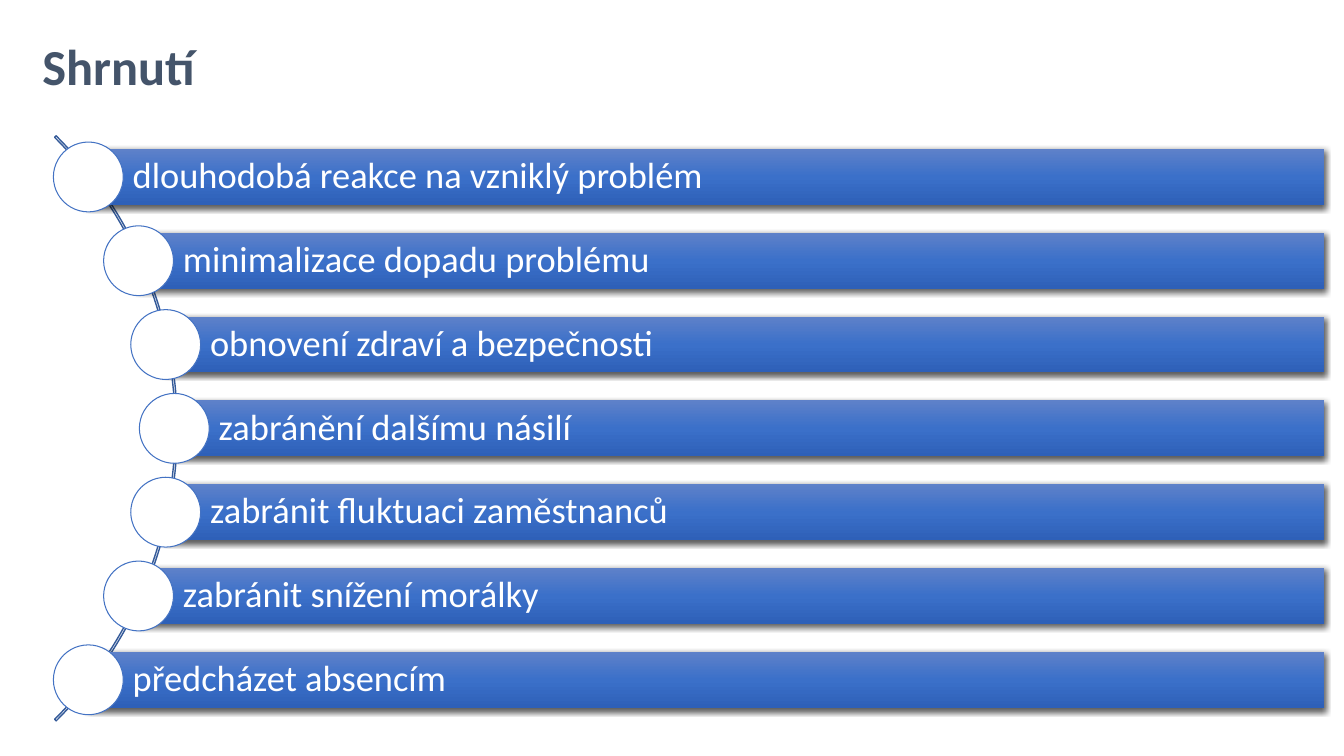
from copy import deepcopy
from math import sqrt

from lxml import etree
from pptx import Presentation
from pptx.dml.color import RGBColor
from pptx.enum.shapes import MSO_SHAPE
from pptx.enum.text import MSO_ANCHOR, MSO_AUTO_SIZE, PP_ALIGN
from pptx.oxml.ns import qn
from pptx.util import Inches, Pt

RECTANGLE, OVAL, BLOCK_ARC = MSO_SHAPE.RECTANGLE, MSO_SHAPE.OVAL, MSO_SHAPE.BLOCK_ARC
MIDDLE, LEFT, NO_AUTOFIT = MSO_ANCHOR.MIDDLE, PP_ALIGN.LEFT, MSO_AUTO_SIZE.NONE

SLIDE_W, SLIDE_H = 13.33, 7.5
FONT = "Calibri"
TITLE_ONLY = 5
COLORS = {
    "title": "44546A",
    "white": "FFFFFF",
    "arc": "345A99",
    "ring": "4372C3",
    "bar_top": "5E81C9",
    "bar_middle": "3B70C9",
    "bar_bottom": "2E60B8",
    "shadow": "000000",
}
POINTS = [
    "dlouhodobá reakce na vzniklý problém",
    "minimalizace dopadu problému",
    "obnovení zdraví a bezpečnosti",
    "zabránění dalšímu násilí",
    "zabránit fluktuaci zaměstnanců",
    "zabránit snížení morálky",
    "předcházet absencím",
]


def color(name):
    return RGBColor.from_string(COLORS[name])


def write(frame, text, size, color_name, margins, bold=False):
    frame.word_wrap = True
    frame.auto_size = NO_AUTOFIT
    frame.vertical_anchor = MIDDLE
    frame.margin_left, frame.margin_top, frame.margin_right, frame.margin_bottom = map(Inches, margins)
    paragraph = frame.paragraphs[0]
    paragraph.alignment = LEFT
    paragraph.line_spacing = 0.9
    run = paragraph.add_run()
    run.text = text
    run.font.name, run.font.size, run.font.bold = FONT, Pt(size), bold
    run.font.color.rgb = color(color_name)


def add_shape(slide, kind, left, top, width, height):
    shape = slide.shapes.add_shape(kind, *map(Inches, (left, top, width, height)))
    shape.shadow.inherit = False
    return shape


def outline(shape, color_name, width):
    shape.line.color.rgb = color(color_name)
    shape.line.width = Pt(width)


def shade_bar(bar):
    bar.fill.gradient()
    bar.fill.gradient_angle = 270
    stop_list = bar._element.spPr.find(".//" + qn("a:gsLst"))
    stop_list.insert(1, deepcopy(stop_list[0]))
    names = ("bar_top", "bar_middle", "bar_bottom")
    for stop, name, position in zip(bar.fill.gradient_stops, names, (0, 0.5, 1)):
        stop.color.rgb = color(name)
        stop.position = position
    bar.line.fill.background()


def drop_shadow(bar):
    effects = bar._element.spPr.find(qn("a:effectLst"))
    shadow = etree.SubElement(effects, qn("a:outerShdw"), blurRad=str(Pt(4.5)),
                              dist=str(Pt(1.5)), dir="5400000", algn="ctr", rotWithShape="0")
    tint = etree.SubElement(shadow, qn("a:srgbClr"), val=COLORS["shadow"])
    etree.SubElement(tint, qn("a:alpha"), val="63000")


def add_title(slide, text, left, top, width, height):
    title = slide.shapes.title
    title.left, title.top, title.width, title.height = map(Inches, (left, top, width, height))
    write(title.text_frame, text, 36, "title", (0.1, 0.05, 0.1, 0.05), bold=True)


def add_curved_list(slide, points, left, top, width, height):
    pitch = height / len(points)
    bar_height = pitch * 2 / 3
    knob = bar_height * 1.25
    right, center_y = left + width, top + height / 2
    radius = height * 0.7
    center_x = left + knob / 2 - sqrt(radius ** 2 - (pitch * (len(points) - 1) / 2) ** 2)

    arc_radius = radius + 0.03
    arc = add_shape(slide, BLOCK_ARC, center_x - arc_radius, center_y - arc_radius,
                    2 * arc_radius, 2 * arc_radius)
    for index, value in enumerate((189, 27, 0.0026)):
        arc.adjustments[index] = value
    arc.fill.background()
    outline(arc, "arc", 1)

    for row, point in enumerate(points):
        y = top + pitch * (row + 0.5)
        x = center_x + sqrt(radius ** 2 - (y - center_y) ** 2)
        bar = add_shape(slide, RECTANGLE, x, y - bar_height / 2, right - x, bar_height)
        shade_bar(bar)
        drop_shadow(bar)
        write(bar.text_frame, point, 26, "white", (0.44, 0.07, 0.07, 0.07))

        circle = add_shape(slide, OVAL, x - knob / 2, y - knob / 2, knob, knob)
        circle.fill.solid()
        circle.fill.fore_color.rgb = color("white")
        outline(circle, "ring", 0.75)


def main():
    deck = Presentation()
    deck.slide_width, deck.slide_height = Inches(SLIDE_W), Inches(SLIDE_H)
    slide = deck.slides.add_slide(deck.slide_layouts[TITLE_ONLY])
    add_curved_list(slide, POINTS, 0.53, 1.34, 12.6, 5.82)
    add_title(slide, "Shrnutí", 0.32, 0.2, 12.89, 0.97)
    deck.save("out.pptx")


if __name__ == "__main__":
    main()
